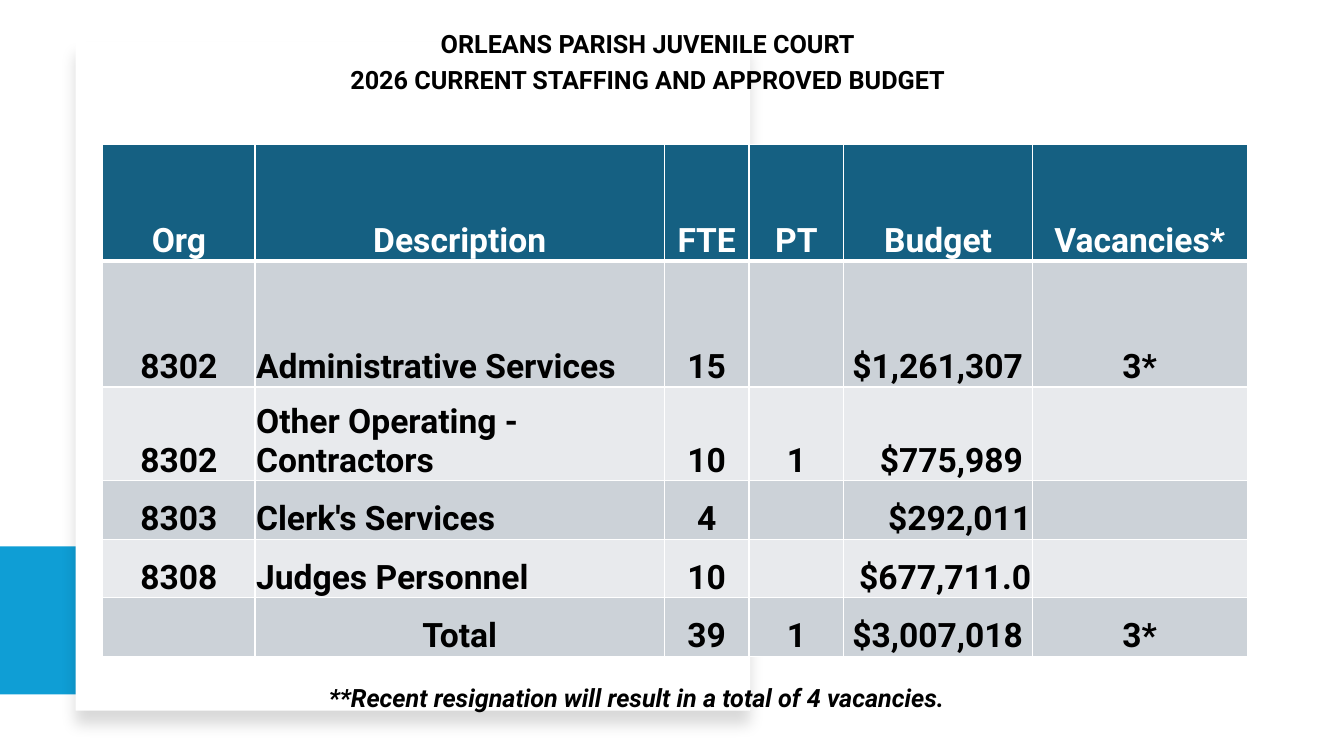
from lxml.etree import SubElement
from pptx import Presentation
from pptx.dml.color import RGBColor
from pptx.enum.shapes import MSO_SHAPE
from pptx.enum.text import MSO_ANCHOR, PP_ALIGN
from pptx.oxml.ns import qn
from pptx.util import Inches, Pt

FONT = "Roboto"
WHITE, BLACK, BLUE, TEAL = "FFFFFF", "000000", "0F9ED5", "156082"
BANDS = ["CCD2D8", "E8EAED"]
LEFT, MID, RIGHT = PP_ALIGN.LEFT, PP_ALIGN.CENTER, PP_ALIGN.RIGHT

TITLE = ["ORLEANS PARISH JUVENILE COURT",
         "2026 CURRENT STAFFING AND APPROVED BUDGET"]
NOTE = ["**Recent resignation will result in a total of 4 vacancies."]
ROWS = [
    ("Org", "Description", "FTE", "PT", "Budget", "Vacancies*"),
    ("8302", "Administrative Services", "15", "", "$1,261,307 ", "3*"),
    ("8302", "Other Operating - Contractors", "10", "1", "$775,989 ", ""),
    ("8303", "Clerk's Services", "4", "", "$292,011", ""),
    ("8308", "Judges Personnel", "10", "", "$677,711.0", ""),
    ("", "Total", "39", "1", "$3,007,018 ", "3*"),
]
WIDTHS = [1.51, 4.06, 0.84, 0.94, 1.87, 2.13]
HEIGHTS = [1.16, 1.25, 0.93, 0.58, 0.58, 0.58]
ALIGNS = [MID, LEFT, MID, MID, RIGHT, MID]


def rgb(code):
    return RGBColor.from_string(code)


def style(para, size, color, align, italic=None):
    para.alignment = align
    font = para.font
    font.name, font.size, font.bold, font.italic = FONT, Pt(size), True, italic
    font.color.rgb = rgb(color)


def panel(slide, box, color):
    shape = slide.shapes.add_shape(MSO_SHAPE.RECTANGLE, *map(Inches, box))
    shape.shadow.inherit = False
    shape.fill.solid()
    shape.fill.fore_color.rgb = rgb(color)
    shape.line.fill.background()
    return shape


def shade(shape):
    """Cast a soft shadow straight down."""
    effects = shape._element.spPr.find(qn("a:effectLst"))
    shadow = SubElement(effects, qn("a:outerShdw"), blurRad=str(Pt(11)),
                        dist=str(Pt(10)), dir="5400000", algn="t", rotWithShape="0")
    color = SubElement(shadow, qn("a:srgbClr"), val=BLACK)
    SubElement(color, qn("a:alpha"), val="15000")


def label(slide, box, lines, italic=None, spacing=None, after=None):
    frame = slide.shapes.add_textbox(*map(Inches, box)).text_frame
    frame.word_wrap = True
    frame.text = "\n".join(lines)
    for para in frame.paragraphs:
        style(para, 18, BLACK, MID, italic)
        para.line_spacing, para.space_after = spacing, after


def border(cell, row):
    """Rule a cell in white, thicker where header and body meet."""
    heavy = {(0, "B"), (1, "T")}
    for side in "LRTB":
        width = Pt(3 if (row, side) in heavy else 1)
        line = SubElement(cell._tc.get_or_add_tcPr(), qn("a:ln" + side), w=str(width))
        SubElement(SubElement(line, qn("a:solidFill")), qn("a:srgbClr"), val=WHITE)


def fill(cell, text, row, col):
    head = row == 0
    border(cell, row)
    cell.fill.solid()
    cell.fill.fore_color.rgb = rgb(TEAL if head else BANDS[(row - 1) % 2])
    cell.vertical_anchor = MSO_ANCHOR.BOTTOM
    cell.margin_left = cell.margin_right = cell.margin_top = Inches(0.01)
    cell.margin_bottom = 0
    cell.text = text
    align = MID if head or text == "Total" else ALIGNS[col]
    style(cell.text_frame.paragraphs[0], 24, WHITE if head else BLACK, align)


def grid(slide, left, top):
    box = left, top, sum(WIDTHS), sum(HEIGHTS)
    table = slide.shapes.add_table(len(ROWS), len(WIDTHS), *map(Inches, box)).table
    for col, width in zip(table.columns, WIDTHS):
        col.width = Inches(width)
    for row, height in zip(table.rows, HEIGHTS):
        row.height = Inches(height)
    for r, texts in enumerate(ROWS):
        for c, text in enumerate(texts):
            fill(table.cell(r, c), text, r, c)


def main():
    deck = Presentation()
    deck.slide_width, deck.slide_height = Inches(13.33), Inches(7.5)
    slide = deck.slides.add_slide(deck.slide_layouts[6])
    panel(slide, (0, 5.42, 6.2, 1.47), BLUE)
    shade(panel(slide, (0.75, 0.41, 6.69, 6.64), WHITE))
    label(slide, (2.86, 0.27, 7.13, 0.73), TITLE, spacing=0.9, after=Pt(6))
    grid(slide, 1.02, 1.43)
    label(slide, (2.71, 6.72, 7.21, 0.4), NOTE, italic=True)
    deck.save("out.pptx")


if __name__ == "__main__":
    main()
